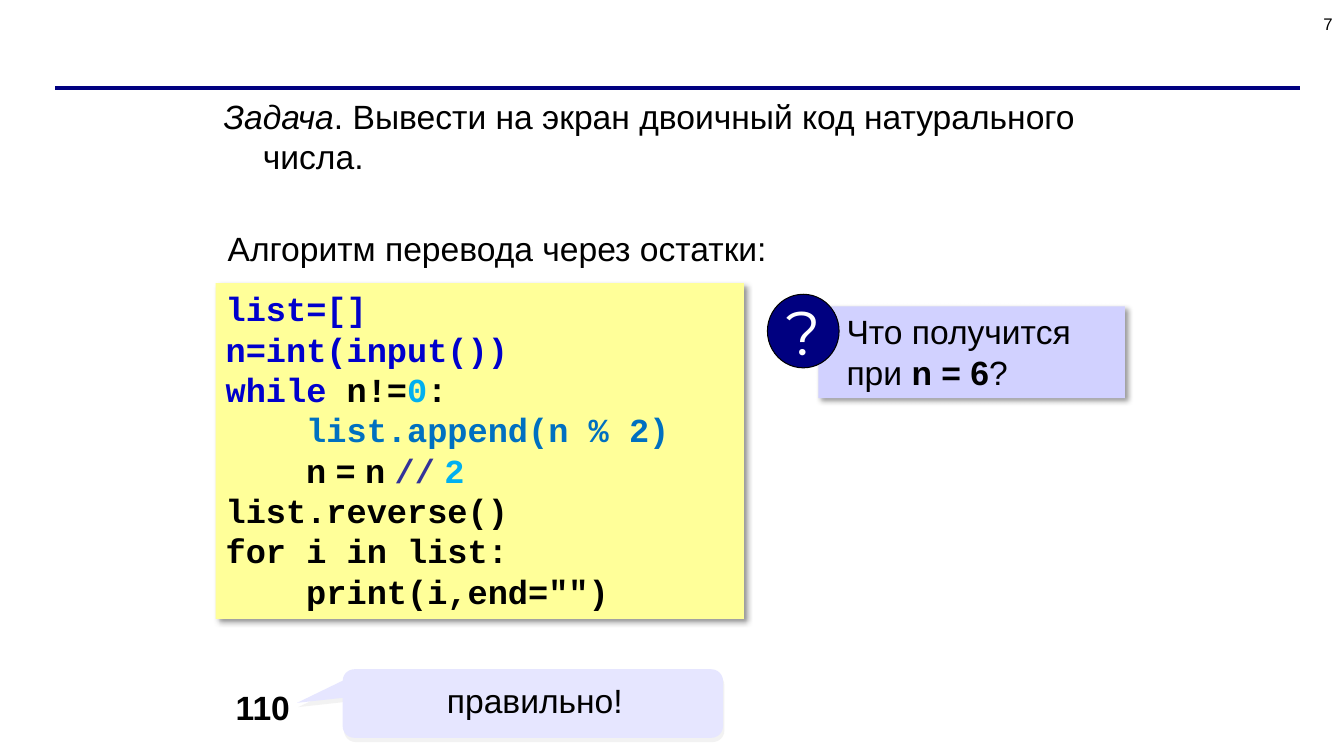
from lxml.etree import SubElement
from pptx import Presentation
from pptx.dml.color import RGBColor
from pptx.enum.shapes import MSO_CONNECTOR, MSO_SHAPE
from pptx.enum.text import MSO_ANCHOR, PP_ALIGN
from pptx.oxml.ns import qn
from pptx.util import Inches, Pt

COLORS = {
    "black": "000000", "white": "FFFFFF", "navy": "000080",
    "note": "FFFF99", "lilac": "D1D1FF", "pale": "E6E6FF", "gray": "E7E6E6",
    "keyword": "0000CC", "number": "00B0F0", "call": "0070C0", "operator": "333399",
}
BASE = {"name": "Arial", "size": Pt(24), "bold": False, "italic": False}
CODE = {"name": "Courier New", "bold": True}
# Shadow: colour, opacity in percent, blur and distance in points, angle
SOFT = ("black", 40, 4, 3, 45)
FAINT = ("gray", 50, 0, 3.2, 72)
TAB = Inches(0.8)


def color(name):
    return RGBColor.from_string(COLORS[name])


def assign(target, values):
    for key, value in values.items():
        setattr(target, key, value)


class Slide:
    """Places elements by percent of the slide's width and height."""

    def __init__(self, deck):
        self.deck = deck
        self.page = deck.slides.add_slide(deck.slide_layouts[6])

    def place(self, left, top, width, height):
        wide, high = self.deck.slide_width, self.deck.slide_height
        shares = ((left, wide), (top, high), (width, wide), (height, high))
        return [round(share * full / 100) for share, full in shares]

    def fill_text(self, box, paras, frame=None, layout=None, font=None):
        """Each para is (indent, first line, spans); a span is (text, colour, font)."""
        assign(box.text_frame, {"word_wrap": True, **(frame or {})})
        for index, (indent, first, spans) in enumerate(paras):
            para = box.text_frame.paragraphs[0] if index == 0 else box.text_frame.add_paragraph()
            assign(para, {"alignment": PP_ALIGN.LEFT, **(layout or {})})
            properties = para._p.get_or_add_pPr()
            properties.set("marL", str(indent))
            properties.set("indent", str(first))
            for text, tint, extra in spans:
                for part, line in enumerate(text.split("\n")):
                    if part:
                        para.add_line_break()
                    span = para.add_run()
                    span.text = line
                    assign(span.font, {**BASE, **(font or {}), **extra})
                    span.font.color.rgb = color(tint)

    def text(self, area, paras, **style):
        box = self.page.shapes.add_textbox(*self.place(*area))
        self.fill_text(box, paras, **style)

    def shape(self, kind, area, fill, paras, outline=None, shadow=None, **style):
        box = self.page.shapes.add_shape(kind, *self.place(*area))
        box.shadow.inherit = False
        box.fill.solid()
        box.fill.fore_color.rgb = color(fill)
        if outline:
            box.line.color.rgb = color(outline)
            box.line.width = Pt(0.75)
        else:
            box.line.fill.background()
        if shadow:
            self.cast(box, *shadow)
        self.fill_text(box, paras, **style)
        return box

    def cast(self, box, tint, opacity, blur, distance, angle):
        effects = box._element.spPr.find(qn("a:effectLst"))
        outer = SubElement(effects, qn("a:outerShdw"), blurRad=str(Pt(blur)),
                           dist=str(Pt(distance)), dir=str(angle * 60000),
                           algn="tl", rotWithShape="0")
        tone = SubElement(outer, qn("a:srgbClr"), val=COLORS[tint])
        SubElement(tone, qn("a:alpha"), val=str(opacity * 1000))

    def rule(self, area, tint, width):
        left, top, length, _ = self.place(*area)
        line = self.page.shapes.add_connector(
            MSO_CONNECTOR.STRAIGHT, left, top, left + length, top)
        line.line.color.rgb = color(tint)
        line.line.width = Pt(width)
        SubElement(line._element.spPr, qn("a:effectLst"))


def plain(text, tint="black", indent=0, **font):
    return indent, 0, [(text, tint, font)]


def main():
    deck = Presentation()
    assign(deck, {"slide_width": Inches(13.33), "slide_height": Inches(7.5)})
    slide = Slide(deck)

    # Header rule and page number
    slide.rule((4.12, 11.6, 92.58, 0), "navy", 3)
    slide.text((76.6, -0.27, 23.3, 6.93), [plain("7", size=Pt(12))],
               frame={"vertical_anchor": MSO_ANCHOR.MIDDLE},
               layout={"alignment": PP_ALIGN.RIGHT})

    # Task and lead-in
    task = [("Задача", "black", {"italic": True}),
            (". Вывести на экран двоичный код натурального числа.", "black", {})]
    slide.text((15.9, 12, 69.4, 12.13), [(Inches(0.39), Inches(-0.39), task)])
    slide.text((16.2, 29.47, 44.25, 6.8), [plain("Алгоритм перевода через остатки:")])

    # Program
    gap = (" ", "black", {"name": "Arial"})
    loop = [("while", "keyword", {}), (" n!=", "black", {}),
            ("0", "number", {}), (":", "black", {})]
    divide = [("n", "black", {}), gap, ("=", "black", {}), gap, ("n", "black", {}), gap,
              ("//", "operator", {}), gap, ("2", "number", {})]
    program = [
        plain("list=[]", "keyword"),
        plain("n=int(input())", "keyword"),
        (0, 0, loop),
        plain("list.append(n % 2)", "call", TAB),
        (TAB, 0, divide),
        plain("list.reverse()"),
        plain("for i in list:"),
        plain('print(i,end="")', indent=TAB),
    ]
    slide.shape(MSO_SHAPE.RECTANGLE, (16.05, 37.47, 39.3, 44.4), "note", program,
                shadow=SOFT, font=CODE, frame={"vertical_anchor": MSO_ANCHOR.TOP})

    # Question with its badge
    question = [("Что получится\nпри ", "black", {}),
                ("n = 6", "black", {"bold": True}), ("?", "black", {})]
    panel = slide.shape(MSO_SHAPE.RECTANGLE, (60.9, 40.53, 22.8, 12.13), "lilac",
                        [(Inches(0.18), 0, question)], shadow=SOFT,
                        frame={"vertical_anchor": MSO_ANCHOR.TOP})
    badge = slide.shape(MSO_SHAPE.OVAL, (57.1, 38.93, 5.33, 9.73), "navy",
                        [plain("?", "white", name="Montserrat", size=Pt(44))],
                        outline="black", layout={"alignment": PP_ALIGN.CENTER},
                        frame={"vertical_anchor": MSO_ANCHOR.MIDDLE, "word_wrap": False})
    slide.page.shapes.add_group_shape([panel, badge])

    # Answer and verdict
    slide.text((16.8, 90.27, 5.63, 6.67), [plain("110", bold=True)],
               frame={"word_wrap": False})
    verdict = slide.shape(
        MSO_SHAPE.ROUNDED_RECTANGULAR_CALLOUT, (25.5, 88.53, 28.3, 9.07), "pale",
        [plain("правильно!")], shadow=FAINT,
        layout={"alignment": PP_ALIGN.CENTER, "line_spacing": 0.8},
        frame={"vertical_anchor": MSO_ANCHOR.MIDDLE,
               "margin_left": Inches(0.06), "margin_right": Inches(0.02)})
    for index, value in enumerate((-0.62, -0.01, 0.17)):
        verdict.adjustments[index] = value

    deck.save("out.pptx")


if __name__ == "__main__":
    main()
